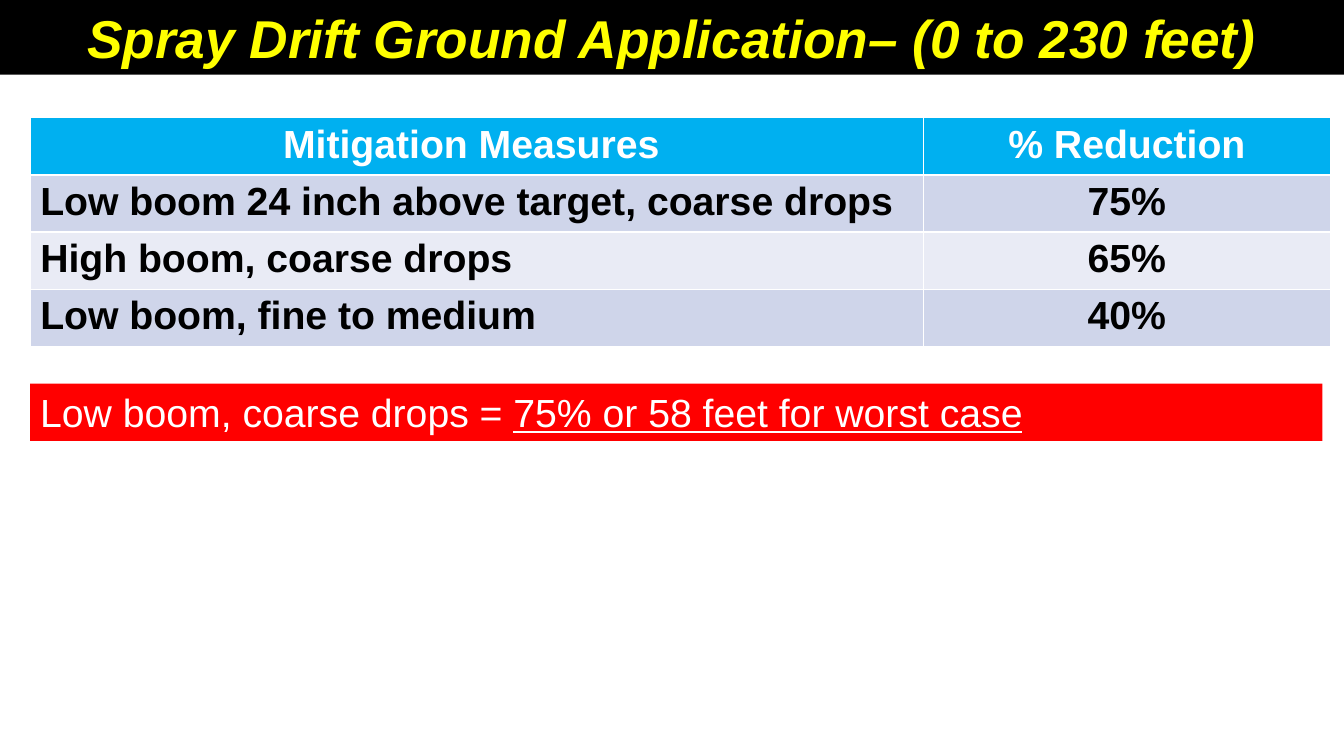
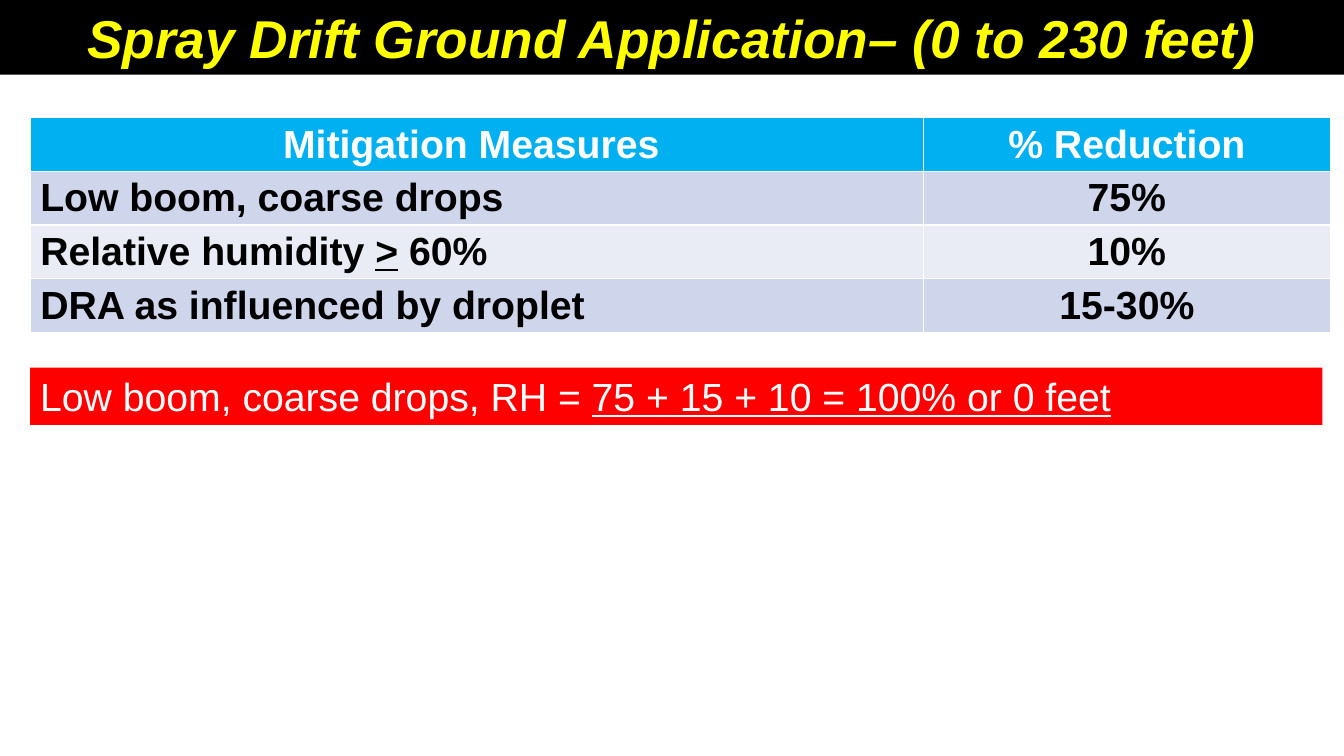
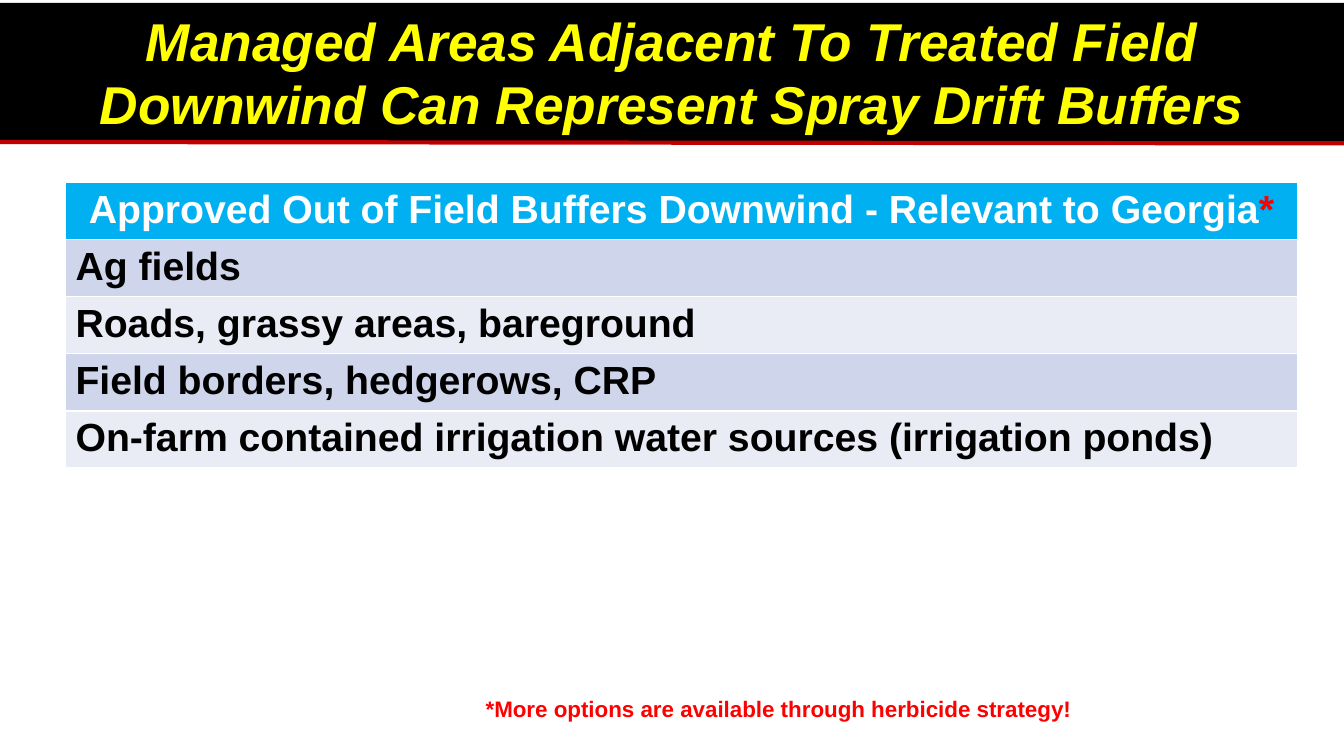
from lxml.etree import SubElement
from pptx import Presentation
from pptx.dml.color import RGBColor
from pptx.enum.shapes import MSO_CONNECTOR, MSO_SHAPE
from pptx.enum.text import MSO_ANCHOR, PP_ALIGN
from pptx.oxml.ns import qn
from pptx.util import Pt

WIDE, HIGH = 960, 540
FONT = "Arial"
BLACK, WHITE, RED = "000000", "FFFFFF", "FF0000"
YELLOW, BLUE, MAROON = "FFFF00", "00B0F0", "C00000"
BANDS = ("CFD5EA", "E9EBF5")
LEFT, CENTER = PP_ALIGN.LEFT, PP_ALIGN.CENTER

HEAD = dict(size=Pt(38), bold=True, italic=True, color=YELLOW)
RESULT = dict(size=Pt(28), bold=False, color=WHITE)
NOTE = dict(size=Pt(16), bold=True, color=RED)
TOP_ROW = dict(size=Pt(28), bold=True, color=WHITE)
BODY = dict(TOP_ROW, color=BLACK)
UNDER = dict(underline=True)


def tint(code):
    return RGBColor.from_string(code)


def paint(item, code):
    item.fill.solid()
    item.fill.fore_color.rgb = tint(code)


def write(frame, text, look, align):
    """Fill a frame with a string or a list of (string, changes) runs."""
    para = frame.paragraphs[0]
    para.alignment = align
    runs = [(text, {})] if isinstance(text, str) else text
    for words, change in runs:
        run = para.add_run()
        run.text = words
        style = {"name": FONT, **look, **change}
        run.font.color.rgb = tint(style.pop("color"))
        for key, value in style.items():
            setattr(run.font, key, value)


def edge(cell):
    """Draw a thin white border on all four sides of a cell."""
    props = cell._tc.get_or_add_tcPr()
    for spot, side in enumerate(("lnL", "lnR", "lnT", "lnB")):
        line = SubElement(props, qn("a:" + side), w=str(Pt(1)))
        fill = SubElement(line, qn("a:solidFill"))
        SubElement(fill, qn("a:srgbClr"), val=WHITE)
        props.insert(spot, line)


class Deck:
    def __init__(self):
        self.show = Presentation()
        self.show.slide_width = Pt(WIDE)
        self.show.slide_height = Pt(HIGH)
        self.slide = None

    def add(self, title, top, high):
        """Start a slide whose title is a full-width black band."""
        self.slide = self.show.slides.add_slide(self.show.slide_layouts[5])
        self.dress(self.slide.shapes.title, (0, top, WIDE, high), BLACK,
                   title, HEAD, CENTER)

    def dress(self, shape, box, fill, text, look, align):
        sides = ("left", "top", "width", "height")
        for side, size in zip(sides, box):
            setattr(shape, side, Pt(size))
        paint(shape, fill)
        frame = shape.text_frame
        frame.word_wrap = True
        frame.vertical_anchor = MSO_ANCHOR.TOP
        write(frame, text, look, align)

    def band(self, box, fill, text, look, align=LEFT):
        shape = self.slide.shapes.add_shape(
            MSO_SHAPE.RECTANGLE, *map(Pt, box))
        shape.shadow.inherit = False
        shape.line.fill.background()
        self.dress(shape, box, fill, text, look, align)

    def table(self, left, top, cols, high, rows):
        """Add a table with a blue first row; high is the row height."""
        grid = self.slide.shapes.add_table(
            len(rows), len(cols), Pt(left), Pt(top),
            Pt(sum(cols)), Pt(high * len(rows))).table
        for col, wide in zip(grid.columns, cols):
            col.width = Pt(wide)
        for r, row in enumerate(rows):
            grid.rows[r].height = Pt(high)
            for c, text in enumerate(row):
                cell = grid.cell(r, c)
                cell.margin_bottom = Pt(2)
                paint(cell, BANDS[(r - 1) % 2] if r else BLUE)
                edge(cell)
                write(cell.text_frame, text, BODY if r else TOP_ROW,
                      LEFT if r and c == 0 else CENTER)

    def rule(self, start, end, code, wide):
        line = self.slide.shapes.add_connector(
            MSO_CONNECTOR.STRAIGHT, *map(Pt, start + end))
        line.line.color.rgb = tint(code)
        line.line.width = Pt(wide)
        SubElement(line._element.spPr, qn("a:effectLst"))

    def drift(self, high, rows, top, result):
        """Add a slide with a reduction table and its red result band."""
        self.add("Spray Drift Ground Application– (0 to 230 feet)", 0, 53.3)
        self.table(21.6, 84.2, (637.8, 291), high,
                   [("Mitigation Measures ", "% Reduction")] + rows)
        self.band((21.6, top, 923, 41), RED, result, RESULT)


def main():
    deck = Deck()
    deck.drift(40.8, [
        ("Low boom 24 inch above target, coarse drops", "75%"),
        ("High boom, coarse drops", "65%"),
        ("Low boom, fine to medium", "40%"),
    ], 274, [("Low boom, coarse drops = ", {}),
             ("75% or 58 feet for worst case", UNDER)])

    deck.drift(38.3, [
        ("Low boom, coarse drops", "75%"),
        ([("Relative humidity ", {}), (">", UNDER), (" 60%", {})], "10%"),
        ("DRA as influenced by droplet", "15-30%"),
    ], 262.6, [("Low boom, coarse drops, RH = ", {}),
               ("75 + 15 + 10 = 100% or 0 feet", UNDER)])

    deck.add("Managed Areas Adjacent To Treated Field "
             "Downwind Can Represent Spray Drift Buffers", 2, 99.4)
    deck.table(46.8, 130.4, (880,), 40.8, [
        ([("Approved Out of Field Buffers Downwind - Relevant to Georgia", {}),
          ("*", dict(color=RED))],),
        ("Ag fields",),
        ("Roads, grassy areas, bareground",),
        ("Field borders, hedgerows, CRP",),
        ("On-farm contained irrigation water sources (irrigation ponds)",),
    ])
    deck.band((329, 493.2, 454.3, 26.6), WHITE,
              "*More options are available through herbicide strategy!",
              NOTE, CENTER)
    deck.rule((0, 101.4), (WIDE, 102.4), MAROON, 3)
    deck.show.save("out.pptx")


if __name__ == "__main__":
    main()
